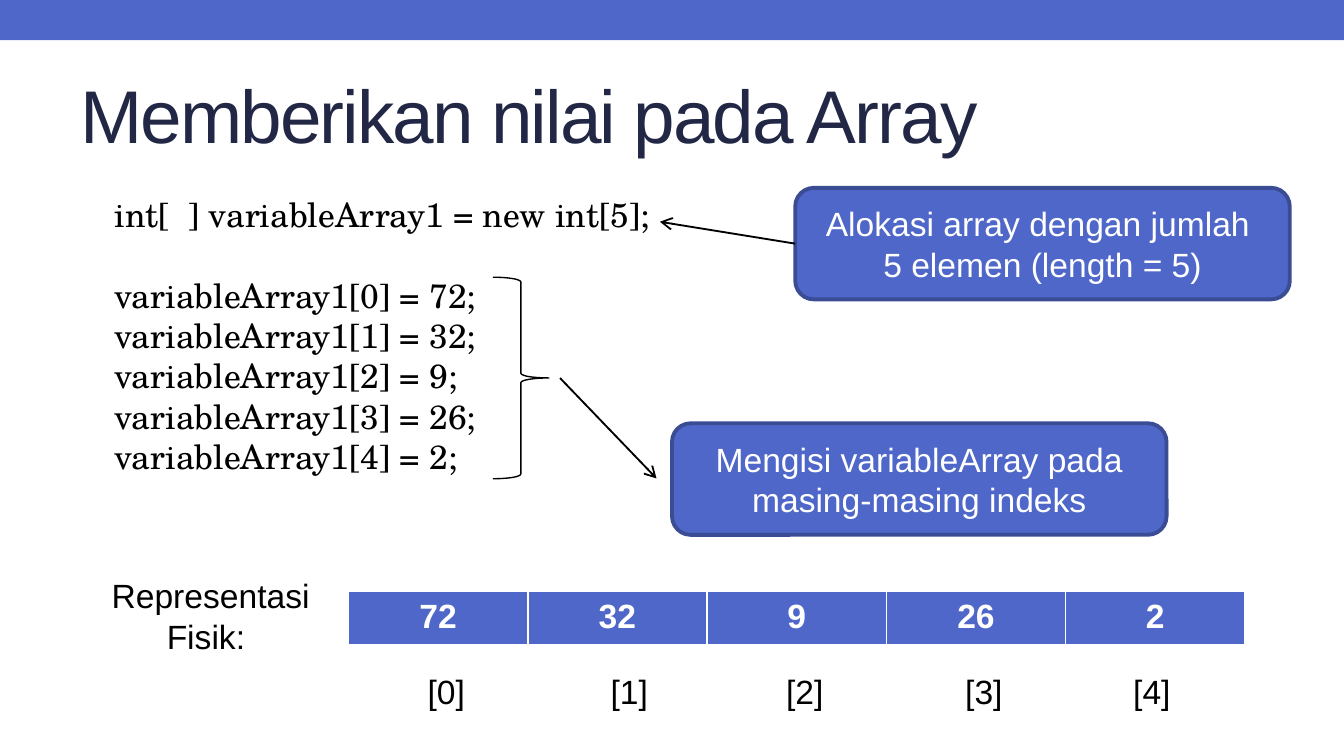
from dataclasses import dataclass

from lxml import etree
from pptx import Presentation
from pptx.dml.color import RGBColor
from pptx.enum.shapes import MSO_CONNECTOR, MSO_SHAPE
from pptx.enum.text import MSO_ANCHOR, MSO_AUTO_SIZE, PP_ALIGN
from pptx.oxml.ns import qn
from pptx.util import Inches, Pt

RECT, ROUND = MSO_SHAPE.RECTANGLE, MSO_SHAPE.ROUNDED_RECTANGLE
BRACE = MSO_SHAPE.RIGHT_BRACE
LEFT, CENTER = PP_ALIGN.LEFT, PP_ALIGN.CENTER
TOP, MIDDLE = MSO_ANCHOR.TOP, MSO_ANCHOR.MIDDLE
FIT = MSO_AUTO_SIZE.SHAPE_TO_FIT_TEXT

BLUE, EDGE, NAVY, BLACK, WHITE = "4E67C8", "3A4C94", "212745", "000000", "FFFFFF"
SANS, SERIF = "Arial", "TeX Gyre Schola"
COLS, ROWS = 100, 56.25  # grid of square cells that covers the slide
CELL = 0.1  # inches
VALUES = [72, 32, 9, 26, 2]
NAME = "variableArray1"


@dataclass
class Box:
    col: float
    row: float
    wide: float
    high: float

    def place(self) -> list[int]:
        return [grid(n) for n in (self.col, self.row, self.wide, self.high)]


@dataclass
class Style:
    color: str = BLACK
    font: str = SANS
    size: float = 18
    bold: bool = False
    align: int = LEFT


@dataclass
class Note:
    text: str
    box: Box


def grid(cells: float) -> int:
    return Inches(cells * CELL)


def paint(color: str) -> RGBColor:
    return RGBColor.from_string(color)


def write(frame, lines: list[str], style: Style) -> None:
    looks = {"name": style.font, "size": Pt(style.size), "bold": style.bold}
    for i, line in enumerate(lines):
        para = frame.add_paragraph() if i else frame.paragraphs[0]
        para.text = line
        para.alignment = style.align
        for run in para.runs:
            for key, value in looks.items():
                setattr(run.font, key, value)
            run.font.color.rgb = paint(style.color)


def label(slide, box: Box, lines: list[str], style: Style):
    """Add a text box that grows with its unwrapped lines."""
    frame = slide.shapes.add_textbox(*box.place()).text_frame
    frame.word_wrap = False
    frame.auto_size = FIT
    write(frame, lines, style)
    return frame


def shape(slide, kind: int, box: Box, fill: str = "", edge: str = "", width: float = 0):
    item = slide.shapes.add_shape(kind, *box.place())
    item.shadow.inherit = False
    if fill:
        item.fill.solid()
        item.fill.fore_color.rgb = paint(fill)
    else:
        item.fill.background()
    if edge:
        item.line.color.rgb = paint(edge)
        item.line.width = Pt(width)
    else:
        item.line.fill.background()
    return item


def callout(slide, note: Note):
    item = shape(slide, ROUND, note.box, BLUE, EDGE, 2.08)
    frame = item.text_frame
    frame.word_wrap = True
    frame.vertical_anchor = MIDDLE
    write(frame, [note.text], Style(WHITE, align=CENTER))
    return item


def arrow(slide, start: tuple[float, float], end: tuple[float, float]):
    ends = [grid(n) for n in start + end]
    item = slide.shapes.add_connector(MSO_CONNECTOR.STRAIGHT, *ends)
    item.line.color.rgb = paint(BLACK)
    item.line.width = Pt(1)
    props = item._element.spPr
    etree.SubElement(props.find(qn("a:ln")), qn("a:tailEnd"), type="arrow")
    etree.SubElement(props, qn("a:effectLst"))
    return item


def border(cell) -> None:
    """Give a cell white lines, with a heavier one below."""
    props = cell._tc.get_or_add_tcPr()
    for i, (side, width) in enumerate({"L": 1, "R": 1, "T": 1, "B": 3}.items()):
        line = etree.Element(qn(f"a:ln{side}"), w=str(Pt(width)))
        fill = etree.SubElement(line, qn("a:solidFill"))
        etree.SubElement(fill, qn("a:srgbClr"), val=WHITE)
        props.insert(i, line)


def array(slide, box: Box) -> None:
    table = slide.shapes.add_table(1, len(VALUES), *box.place()).table
    for i, value in enumerate(VALUES):
        table.columns[i].width = grid(box.wide / len(VALUES))
        cell = table.cell(0, i)
        cell.fill.solid()
        cell.fill.fore_color.rgb = paint(BLUE)
        cell.vertical_anchor = TOP
        write(cell.text_frame, [str(value)], Style(WHITE, bold=True, align=CENTER))
        border(cell)


def main() -> None:
    deck = Presentation()
    deck.slide_width, deck.slide_height = grid(COLS), grid(ROWS)
    slide = deck.slides.add_slide(deck.slide_layouts[6])

    shape(slide, RECT, Box(0, 0, COLS, 3), BLUE)
    title = slide.shapes.add_textbox(*Box(5, 4.4, 90, 8.1).place()).text_frame
    title.word_wrap = True
    title.vertical_anchor = MIDDLE
    write(title, ["Memberikan nilai pada Array"], Style(NAVY, size=40))
    title.paragraphs[0].runs[0].font._element.set("spc", "-100")

    code = [f"int[  ] {NAME} = new int[{len(VALUES)}];"]
    code += [f"{NAME}[{i}] = {value};" for i, value in enumerate(VALUES)]
    frame = label(slide, Box(7.54, 13.95, 42.4, 25.2), code, Style(font=SERIF))
    frame.paragraphs[1].space_before = Pt(21.6)

    size = Note("Alokasi array dengan jumlah \v5 elemen (length = 5)",
                Box(59.17, 13.98, 36.8, 8.3))
    fill = Note("Mengisi variableArray pada masing-masing indeks",
                Box(50, 31.5, 36.8, 8.3))
    first = callout(slide, size)
    arrow(slide, (59.17, 18.13), (49.1, 16.5)).begin_connect(first, 1)
    shape(slide, BRACE, Box(36.67, 20.63, 4.17, 15), edge=BLACK, width=0.75)
    callout(slide, fill)
    arrow(slide, (41.67, 28.13), (48.85, 35.6))

    array(slide, Box(25.93, 43.97, 66.7, 4.1))
    label(slide, Box(7.22, 42.3, 16.9, 7.1), ["Representasi", "Fisik: "],
          Style(align=CENTER))
    for i, col in enumerate([30.83, 44.44, 57.5, 70.83, 83.33]):
        label(slide, Box(col, 49.4, 4.8, 4), [f"[{i}]"], Style())

    deck.save("out.pptx")


if __name__ == "__main__":
    main()
